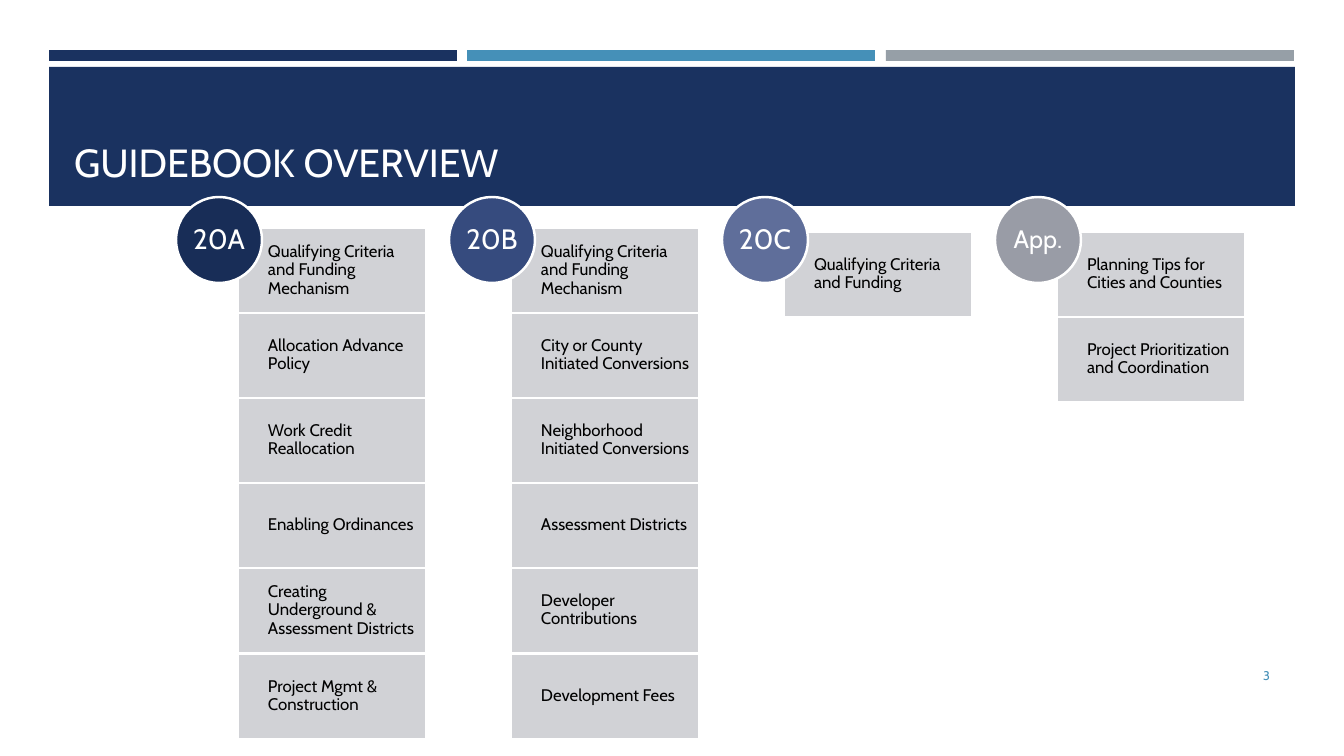
from lxml.etree import SubElement
from pptx import Presentation
from pptx.dml.color import RGBColor
from pptx.enum.shapes import MSO_SHAPE as SHAPE
from pptx.enum.text import MSO_ANCHOR as ANCHOR, PP_ALIGN as ALIGN
from pptx.oxml.ns import qn
from pptx.util import Emu, Pt

EMU_PER_PX = 914400 / 100.8
NAVY, BLUE, GRAY, WHITE = "1A3260", "4590B8", "969FA7", "FFFFFF"

presentation = Presentation()
presentation.slide_width = Emu(round(1344 * EMU_PER_PX))
presentation.slide_height = Emu(round(756 * EMU_PER_PX))
slide = presentation.slides.add_slide(presentation.slide_layouts[6])


def add_box(kind, box, fill=None, outlined=False):
    left, top, width, height = [Emu(round(length * EMU_PER_PX)) for length in box]
    if kind is None:
        return slide.shapes.add_textbox(left, top, width, height)
    shape = slide.shapes.add_shape(kind, left, top, width, height)
    shape.shadow.inherit = False
    shape.fill.solid()
    shape.fill.fore_color.rgb = RGBColor.from_string(fill)
    if outlined:
        shape.line.color.rgb = RGBColor.from_string(WHITE)
        shape.line.width = Pt(1.75)
    else:
        shape.line.fill.background()
    return shape


def set_text(shape, text, size, color, align, anchor, margins, spacing=1.0):
    frame = shape.text_frame
    frame.word_wrap = True
    frame.vertical_anchor = anchor
    for side, margin in zip(("left", "top", "right", "bottom"), margins):
        setattr(frame, f"margin_{side}", Emu(round(margin * EMU_PER_PX)))
    paragraph = frame.paragraphs[0]
    paragraph.alignment = align
    paragraph.line_spacing = spacing
    run = paragraph.add_run()
    run.text = text
    for name, value in {"name": "Cabin", "size": Pt(size)}.items():
        setattr(run.font, name, value)
    run.font.color.rgb = RGBColor.from_string(color)


# Accent bars and title banner
for index, color in enumerate((NAVY, BLUE, GRAY)):
    add_box(SHAPE.RECTANGLE, (49 + index * 837 // 2, 50, 408, 11), color)
add_box(SHAPE.RECTANGLE, (49, 67, 1246, 139), NAVY)

# Title and slide number
title = add_box(None, (64, 81, 1216, 109))
set_text(title, "GUIDEBOOK OVERVIEW", 28, WHITE, ALIGN.LEFT, ANCHOR.BOTTOM, (10, 5, 10, 5))
number = add_box(None, (1164, 656, 116, 40))
set_text(number, "3", 9, BLUE, ALIGN.RIGHT, ANCHOR.MIDDLE, (10, 5, 10, 5))

# Guidebook columns: badge, badge colour, badge text size, top of first row, topics
columns = [
    ("20A", "182D57", 20, 228, [
        "Qualifying Criteria and Funding Mechanism",
        "Allocation Advance Policy",
        "Work Credit Reallocation",
        "Enabling Ordinances",
        "Creating Underground & Assessment Districts",
        "Project Mgmt & Construction",
    ]),
    ("20B", "364B7E", 20, 228, [
        "Qualifying Criteria and Funding Mechanism",
        "City or County Initiated Conversions",
        "Neighborhood Initiated Conversions",
        "Assessment Districts",
        "Developer Contributions",
        "Development Fees",
    ]),
    ("20C", "5F6E9A", 20, 232, ["Qualifying Criteria and Funding"]),
    ("App.", "999CA6", 18, 232, [
        "Planning Tips for Cities and Counties",
        "Project Prioritization and Coordination",
    ]),
]
for index, (badge, color, size, first_top, topics) in enumerate(columns):
    left = 238 + index * 273
    for row, topic in enumerate(topics):
        top = first_top + row * 426 // 5
        cell = add_box(SHAPE.RECTANGLE, (left, top, 188, 85), "CDCED2", outlined=True)
        fill_color = cell.fill._xPr.find(qn("a:solidFill"))[0]
        SubElement(fill_color, qn("a:alpha"), val="90000")
        set_text(cell, topic, 12, "000000", ALIGN.LEFT, ANCHOR.MIDDLE, (30, 9, 9, 9), 0.9)
    circle = add_box(SHAPE.OVAL, (left - 62, 197, 86, 86), color, outlined=True)
    set_text(circle, badge, size, WHITE, ALIGN.CENTER, ANCHOR.MIDDLE, (0, 0, 0, 0), 0.9)

presentation.save("out.pptx")
